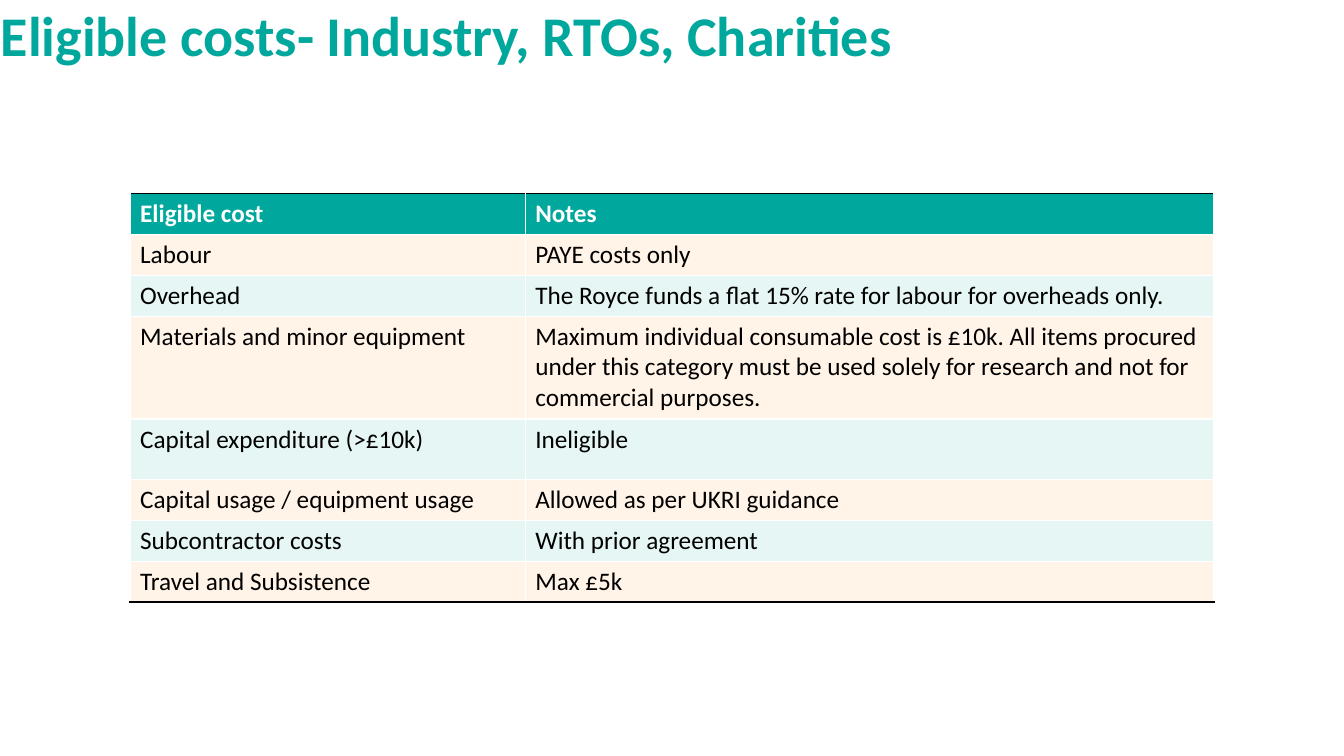
from lxml import etree
from pptx import Presentation
from pptx import util as u
from pptx.dml.color import RGBColor
from pptx.enum import shapes, text
from pptx.oxml import ns

TEAL = RGBColor(0x00, 0xA7, 0x9D)
MINT = RGBColor(0xE6, 0xF6, 0xF5)
CREAM = RGBColor(0xFF, 0xF4, 0xE7)
WHITE = RGBColor(0xFF, 0xFF, 0xFF)
BLACK = RGBColor(0x00, 0x00, 0x00)

COSTS = [
    ("Eligible cost", "Notes"),
    ("Labour", "PAYE costs only"),
    ("Overhead", "The Royce funds a flat 15% rate for labour for overheads only."),
    ("Materials and minor equipment",
     "Maximum individual consumable cost is £10k. All items procured under "
     "this category must be used solely for research and not for commercial purposes."),
    ("Capital expenditure (>£10k)", "Ineligible"),
    ("Capital usage / equipment usage", "Allowed as per UKRI guidance"),
    ("Subcontractor costs", "With prior agreement"),
    ("Travel and Subsistence", "Max £5k"),
]
WIDTHS = [3.92, 6.83]
ROW = 0.4
TALL = {3: 1.02, 4: 0.6}


class Deck:
    font = "Calibri"

    def __init__(self, wide, high):
        self.prs = Presentation()
        self.prs.slide_width = u.Inches(wide)
        self.prs.slide_height = u.Inches(high)
        self.slide = self.prs.slides.add_slide(self.prs.slide_layouts[6])

    def style(self, para, size, color, bold):
        for run in para.runs:
            run.font.name = self.font
            run.font.size = u.Pt(size)
            run.font.bold = bold
            run.font.color.rgb = color

    def panel(self, left, top, wide, high, color):
        box = self.slide.shapes.add_shape(
            shapes.MSO_SHAPE.RECTANGLE, *map(u.Inches, (left, top, wide, high)))
        box.shadow.inherit = False
        box.fill.solid()
        box.fill.fore_color.rgb = color
        box.line.color.rgb = color
        box.line.width = u.Pt(2)

    def title(self, left, top, wide, high, words):
        box = self.slide.shapes.add_textbox(*map(u.Inches, (left, top, wide, high)))
        frame = box.text_frame
        frame.word_wrap = True
        frame.margin_left = frame.margin_top = u.Inches(0.01)
        frame.margin_right = frame.margin_bottom = 0
        frame.vertical_anchor = text.MSO_ANCHOR.TOP
        frame.text = words
        self.style(frame.paragraphs[0], 40, TEAL, True)

    def edge(self, cell, sides):
        props = cell._tc.get_or_add_tcPr()
        for spot, (side, color) in enumerate(sides.items()):
            line = etree.Element(ns.qn("a:ln" + side), w=str(u.Pt(1)))
            fill = etree.SubElement(line, ns.qn("a:solidFill"))
            etree.SubElement(fill, ns.qn("a:srgbClr"), val=str(color))
            props.insert(spot, line)

    def table(self, left, top, widths, heights, rows):
        grid = self.slide.shapes.add_table(
            len(rows), len(widths), u.Inches(left), u.Inches(top),
            u.Inches(sum(widths)), u.Inches(sum(heights))).table
        for col, wide in zip(grid.columns, widths):
            col.width = u.Inches(wide)
        last = len(rows) - 1
        for r, (row, high) in enumerate(zip(rows, heights)):
            grid.rows[r].height = u.Inches(high)
            head = r == 0
            for c, words in enumerate(row):
                cell = grid.cell(r, c)
                cell.text_frame.text = words
                self.style(cell.text_frame.paragraphs[0], 18,
                           WHITE if head else BLACK, head)
                cell.fill.solid()
                cell.fill.fore_color.rgb = TEAL if head else CREAM if r % 2 else MINT
                self.edge(cell, {"L": WHITE, "R": WHITE,
                                 "T": BLACK if head else WHITE,
                                 "B": BLACK if r == last else WHITE})


def main():
    deck = Deck(13.33, 7.5)
    # Backdrop
    deck.panel(0, 0, 13.33, 7.5, WHITE)
    # Cost table
    heights = [TALL.get(r, ROW) for r in range(len(COSTS))]
    deck.table(1.29, 1.92, WIDTHS, heights, COSTS)
    # Heading
    deck.title(0, 0, 10, 0.69, "Eligible costs- Industry, RTOs, Charities")
    deck.prs.save("out.pptx")


if __name__ == "__main__":
    main()
